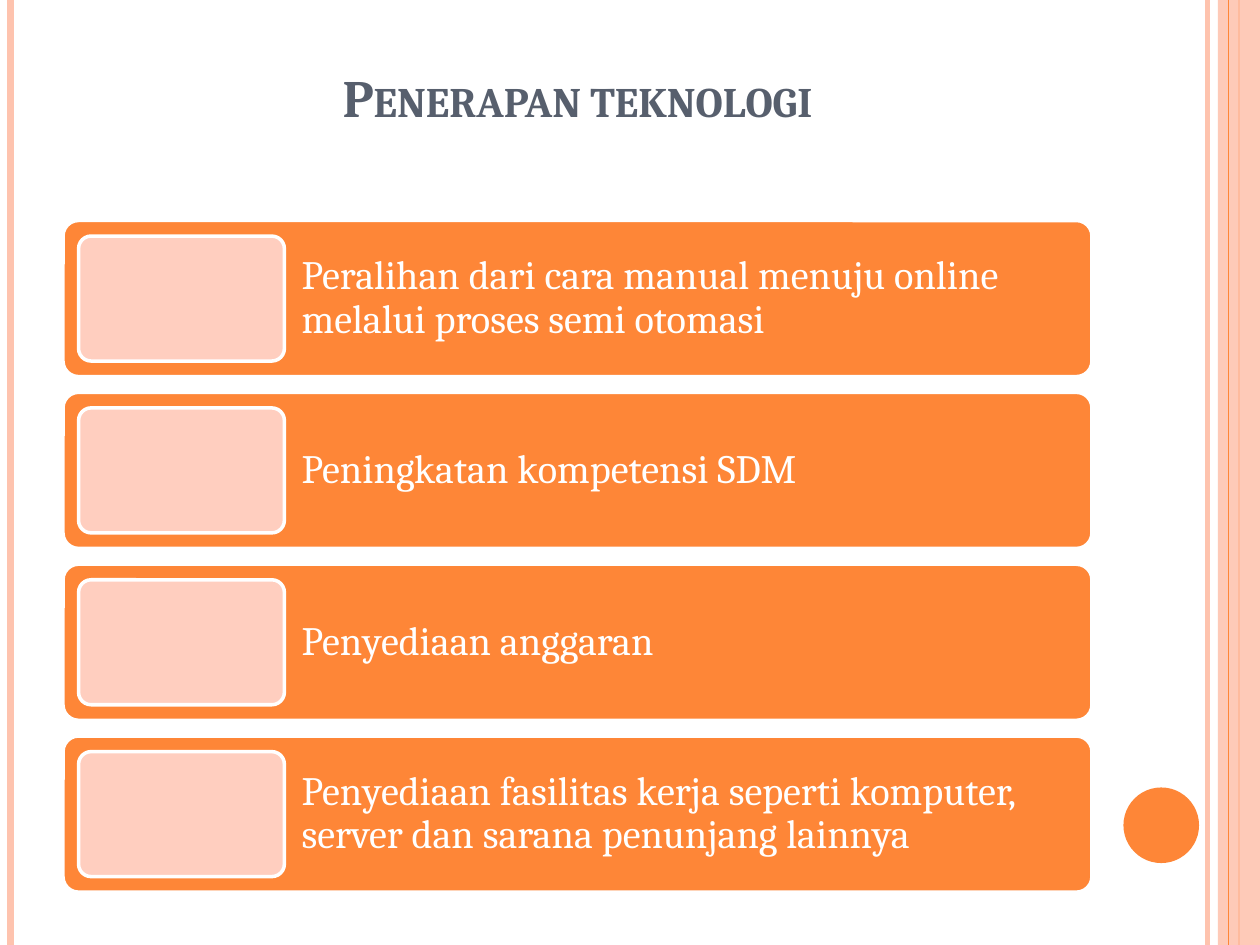
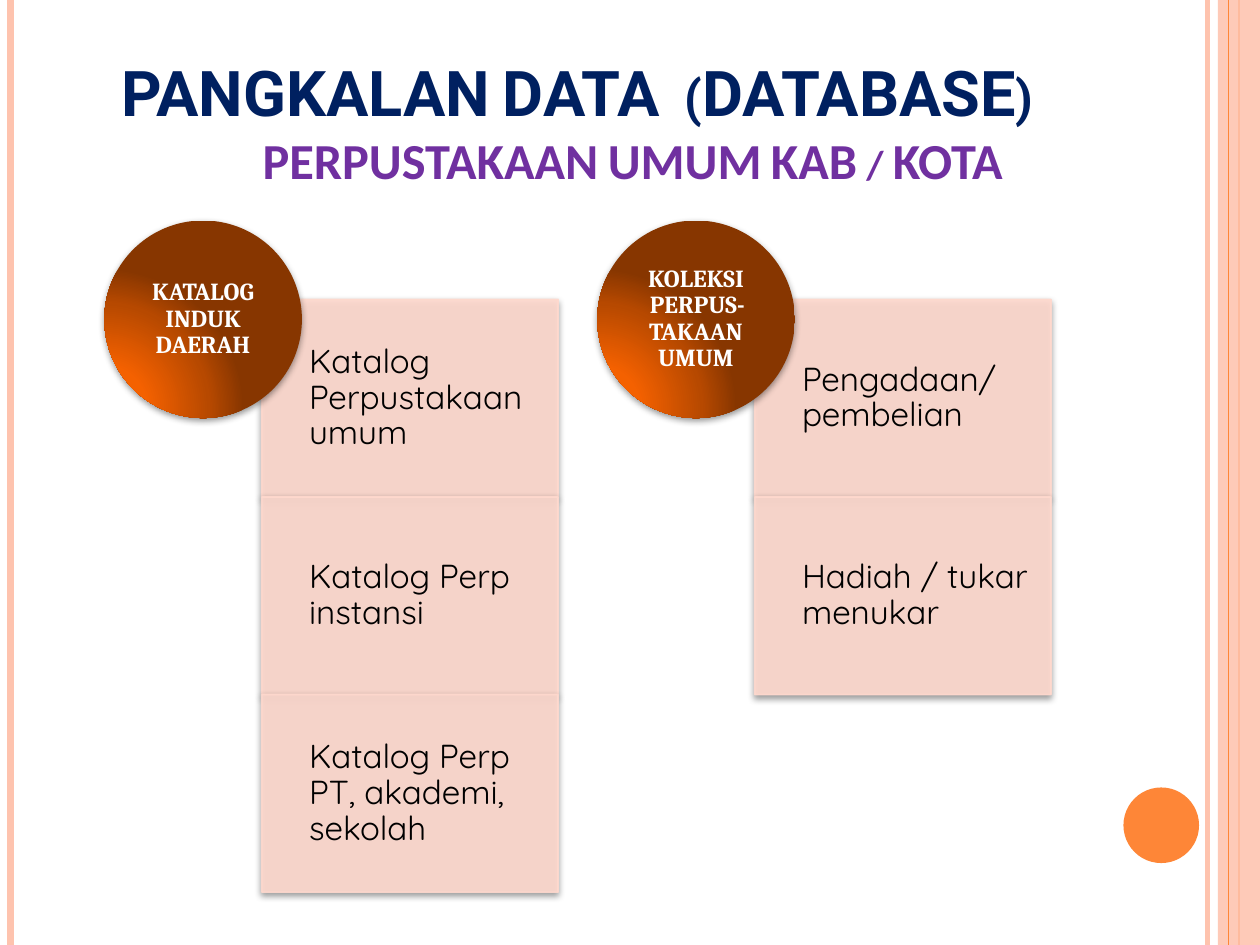
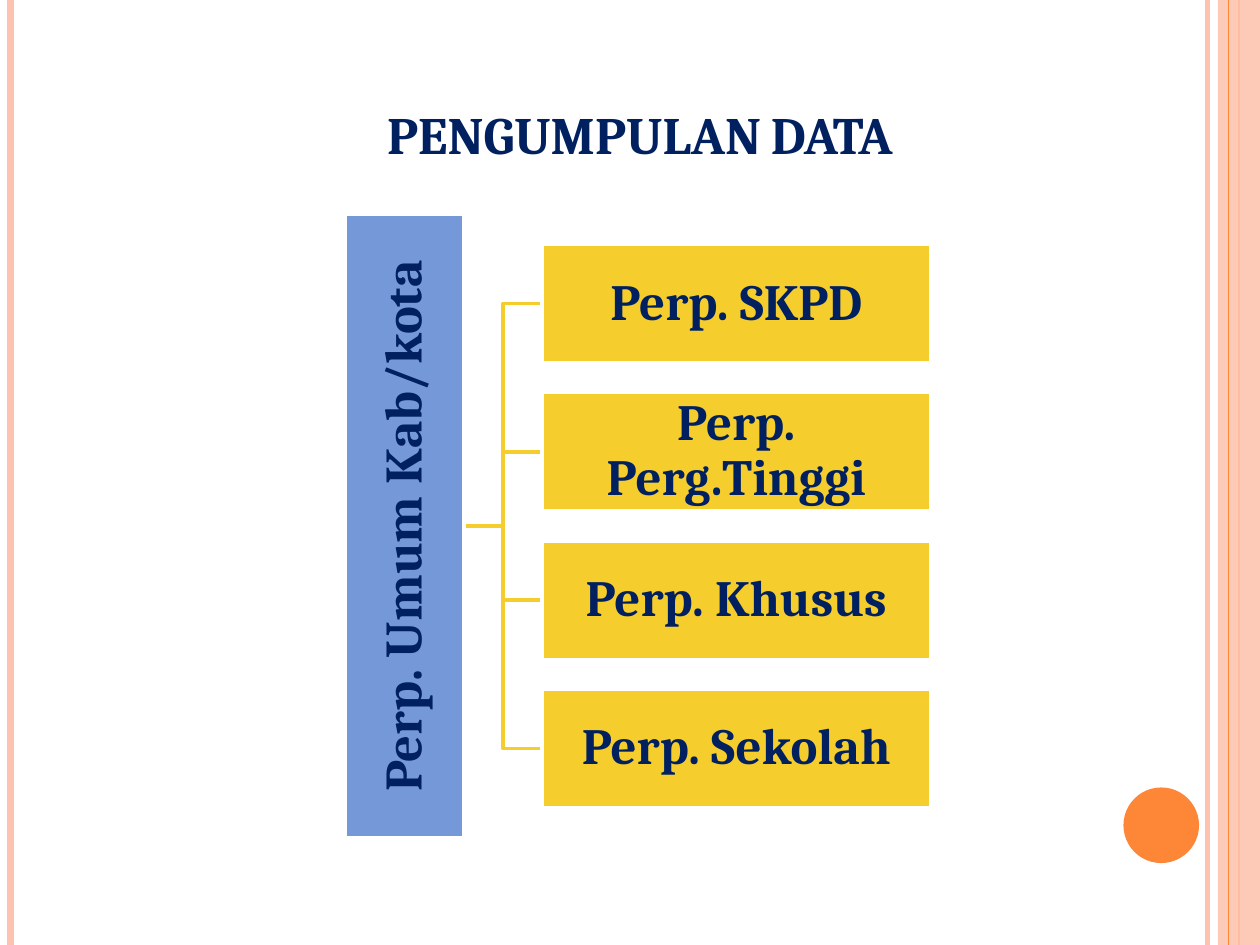
from dataclasses import dataclass

from lxml.etree import SubElement
from pptx import Presentation
from pptx.dml.color import RGBColor
from pptx.enum.shapes import MSO_CONNECTOR, MSO_SHAPE
from pptx.enum.text import MSO_ANCHOR, PP_ALIGN
from pptx.oxml import parse_xml
from pptx.oxml.ns import nsdecls, qn
from pptx.util import Pt


@dataclass(frozen=True)
class Theme:
    orange: str = "FE8637"
    peach: str = "FEC3AE"
    light_peach: str = "FFCEBF"
    card: str = "FFD9CE"
    slate: str = "575F6D"
    navy: str = "002060"
    purple: str = "7030A0"
    blue: str = "7598D9"
    yellow: str = "F5CD2D"
    white: str = "FFFFFF"
    black: str = "000000"
    serif: str = "Cambria"
    title_size: float = 30
    database_size: float = 36
    subtitle_size: float = 28.8
    bar_size: float = 23
    card_size: float = 19
    circle_size: float = 14
    hub_size: float = 30
    branch_size: float = 29


theme = Theme()
SHADOW = (
    f'<a:effectLst {nsdecls("a")}><a:outerShdw blurRad="50800" dist="20320" dir="5400000" '
    'rotWithShape="0"><a:srgbClr val="000000"><a:alpha val="42000"/></a:srgbClr>'
    "</a:outerShdw></a:effectLst>"
)
GRADIENT = (
    f'<a:gradFill {nsdecls("a")} rotWithShape="1"><a:gsLst>'
    '<a:gs pos="0"><a:srgbClr val="FD6400"/></a:gs>'
    '<a:gs pos="30000"><a:srgbClr val="F46100"/></a:gs>'
    '<a:gs pos="75000"><a:srgbClr val="B74900"/></a:gs>'
    '<a:gs pos="100000"><a:srgbClr val="873600"/></a:gs></a:gsLst>'
    '<a:path path="circle"><a:fillToRect l="5000" t="100000" r="120000" b="10000"/></a:path>'
    "</a:gradFill>"
)


def add_box(page, kind, left, top, width, height, fill=None, line=None, weight=2,
            alpha=None, corner=None, shadow=False):
    box = page.shapes.add_shape(kind, Pt(left), Pt(top), Pt(width), Pt(height))
    properties = box._element.spPr
    if corner is not None:
        box.adjustments[0] = corner
    if fill:
        box.fill.solid()
        box.fill.fore_color.rgb = RGBColor.from_string(fill)
    else:
        box.fill.background()
    if line:
        box.line.color.rgb = RGBColor.from_string(line)
        box.line.width = Pt(weight)
    else:
        box.line.fill.background()
    if alpha:
        for colour in properties.iter(qn("a:srgbClr")):
            SubElement(colour, qn("a:alpha")).set("val", str(alpha * 1000))
    if shadow:
        properties.append(parse_xml(SHADOW))
    else:
        box.shadow.inherit = False
    return box


def write(box, text, size, colour, font=theme.serif, bold=False, small_caps=False,
          align=PP_ALIGN.LEFT, anchor=MSO_ANCHOR.MIDDLE, spacing=0.9,
          insets=(7.2, 7.2, 7.2, 7.2), indent=0):
    frame = box.text_frame
    frame.word_wrap = True
    frame.vertical_anchor = anchor
    frame.margin_left, frame.margin_top, frame.margin_right, frame.margin_bottom = map(Pt, insets)
    para = frame.add_paragraph() if frame.text else frame.paragraphs[0]
    para.alignment = align
    para.line_spacing = spacing
    if indent:
        para._p.get_or_add_pPr().set("marL", str(Pt(indent)))
    span = para.add_run()
    span.text = text
    span.font.name = font
    span.font.size = Pt(size)
    span.font.bold = bold
    span.font.color.rgb = RGBColor.from_string(colour)
    if small_caps:
        span._r.get_or_add_rPr().set("cap", "small")


deck = Presentation()
deck.slide_width, deck.slide_height = Pt(720), Pt(540)
blank = deck.slide_layouts[6]
pages = [deck.slides.add_slide(blank) for _ in range(3)]
technology, database, collection = pages

# Shared side stripes and circle: x, colour, weight
stripes = [
    (690, theme.peach, 3),
    (6, theme.peach, 4.5),
    (708, theme.orange, 1.5),
    (702, theme.orange, 0.75),
]
for page in pages:
    for x, colour, weight in stripes:
        if x == 702:
            add_box(page, MSO_SHAPE.RECTANGLE, 696, 0, 24, 540, theme.peach, alpha=87)
        stripe = page.shapes.add_connector(MSO_CONNECTOR.STRAIGHT, Pt(x), Pt(0), Pt(x), Pt(540))
        stripe.line.color.rgb = RGBColor.from_string(colour)
        stripe.line.width = Pt(weight)
        SubElement(stripe._element.spPr, qn("a:effectLst"))
    add_box(page, MSO_SHAPE.OVAL, 642, 450, 43.2, 43.2, theme.orange)

# Titles: page, left, top, width, height, lines of (text, size, colour, font, indent)
titles = [
    (technology, 36, 21.6, 588, 55.4,
     [("Penerapan teknologi", theme.title_size, theme.slate, theme.serif, 0)]),
    (database, 36, 21.6, 588, 90,
     [("PANGKALAN DATA  (DATABASE)", theme.database_size, theme.navy, "Roboto", 0),
      ("PERPUSTAKAAN UMUM KAB / KOTA", theme.subtitle_size, theme.purple, "Calibri", 63)]),
    (collection, 109.4, 31.7, 512.6, 66.2,
     [("PENGUMPULAN DATA", theme.title_size, theme.navy, theme.serif, 0)]),
]
for page, left, top, width, height, lines in titles:
    title = page.shapes.add_textbox(Pt(left), Pt(top), Pt(width), Pt(height))
    for text, size, colour, font, indent in lines:
        write(title, text, size, colour, font=font, bold=True, small_caps=True,
              align=PP_ALIGN.CENTER, anchor=MSO_ANCHOR.BOTTOM, spacing=1.0,
              insets=(7.2, 3.6, 7.2, 3.6), indent=indent)

# Technology: four bars, each with a light panel
steps = [
    "Peralihan dari cara manual menuju online melalui proses semi otomasi",
    "Peningkatan kompetensi SDM",
    "Penyediaan anggaran",
    "Penyediaan fasilitas kerja seperti komputer, server dan sarana penunjang lainnya",
]
for index, step in enumerate(steps):
    top = 126 + 98.2 * index
    bar = add_box(technology, MSO_SHAPE.ROUNDED_RECTANGLE, 36, top, 588, 89.2,
                  theme.orange, theme.white, corner=0.1)
    write(bar, step, theme.bar_size, theme.white, insets=(133.7, 7.2, 7.2, 7.2))
    add_box(technology, MSO_SHAPE.ROUNDED_RECTANGLE, 44.9, top + 8.9, 117.6, 71.4,
            theme.light_peach, theme.white, corner=0.1)

# Database: a circle over a stack of cards
groups = [
    ("KATALOG INDUK DAERAH",
     ["Katalog Perpustakaan umum", "Katalog Perp instansi", "Katalog Perp PT, akademi, sekolah"]),
    ("KOLEKSI PERPUS-TAKAAN UMUM", ["Pengadaan/ pembelian", "Hadiah / tukar menukar"]),
]
side = 112.9
for column, (heading, entries) in enumerate(groups):
    left = 59.6 + 281.7 * column
    for row, entry in enumerate(entries):
        card = add_box(database, MSO_SHAPE.RECTANGLE, left + 90, 171.1 + side * row, 169.3, side,
                       theme.card, theme.card, weight=1, alpha=90, shadow=True)
        write(card, entry, theme.card_size, theme.black, font="Quicksand",
              insets=(27, 10.8, 10.8, 10.8))
    circle = add_box(database, MSO_SHAPE.OVAL, left, 126, side, side, shadow=True)
    properties = circle._element.spPr
    properties.replace(properties.find(qn("a:noFill")), parse_xml(GRADIENT))
    write(circle, heading, theme.circle_size, theme.white, bold=True,
          align=PP_ALIGN.CENTER, insets=(0, 0, 0, 0))

# Collection: elbows from the hub to four branches
branches = ["Perp. SKPD", "Perp. Perg.Tinggi", "Perp. Khusus", "Perp. Sekolah"]
branch_left, branch_height, hub_right, hub_middle = 309.8, 67.8, 265, 300.6
elbow_x = (hub_right + branch_left) / 2
tops = [139.6 + 84.75 * index for index in range(len(branches))]
for top in tops:
    middle = top + branch_height / 2
    builder = collection.shapes.build_freeform(Pt(hub_right), Pt(hub_middle))
    builder.add_line_segments(
        [(Pt(elbow_x), Pt(hub_middle)), (Pt(elbow_x), Pt(middle)), (Pt(branch_left), Pt(middle))],
        close=False)
    elbow = builder.convert_to_shape()
    elbow.fill.background()
    elbow.line.color.rgb = RGBColor.from_string(theme.yellow)
    elbow.line.width = Pt(2)
    elbow.shadow.inherit = False

hub = add_box(collection, MSO_SHAPE.RECTANGLE, 53, hub_middle - branch_height / 2, 356.4,
              branch_height, theme.blue, theme.white)
hub.rotation = 270
labels = [(hub, "Perp. Umum Kab/kota", theme.hub_size)]
for top, branch in zip(tops, branches):
    box = add_box(collection, MSO_SHAPE.RECTANGLE, branch_left, top, 222, branch_height,
                  theme.yellow, theme.white)
    labels.append((box, branch, theme.branch_size))
for box, text, size in labels:
    write(box, text, size, theme.navy, bold=True, align=PP_ALIGN.CENTER,
          insets=(1.4, 1.4, 1.4, 1.4))

deck.save("out.pptx")
